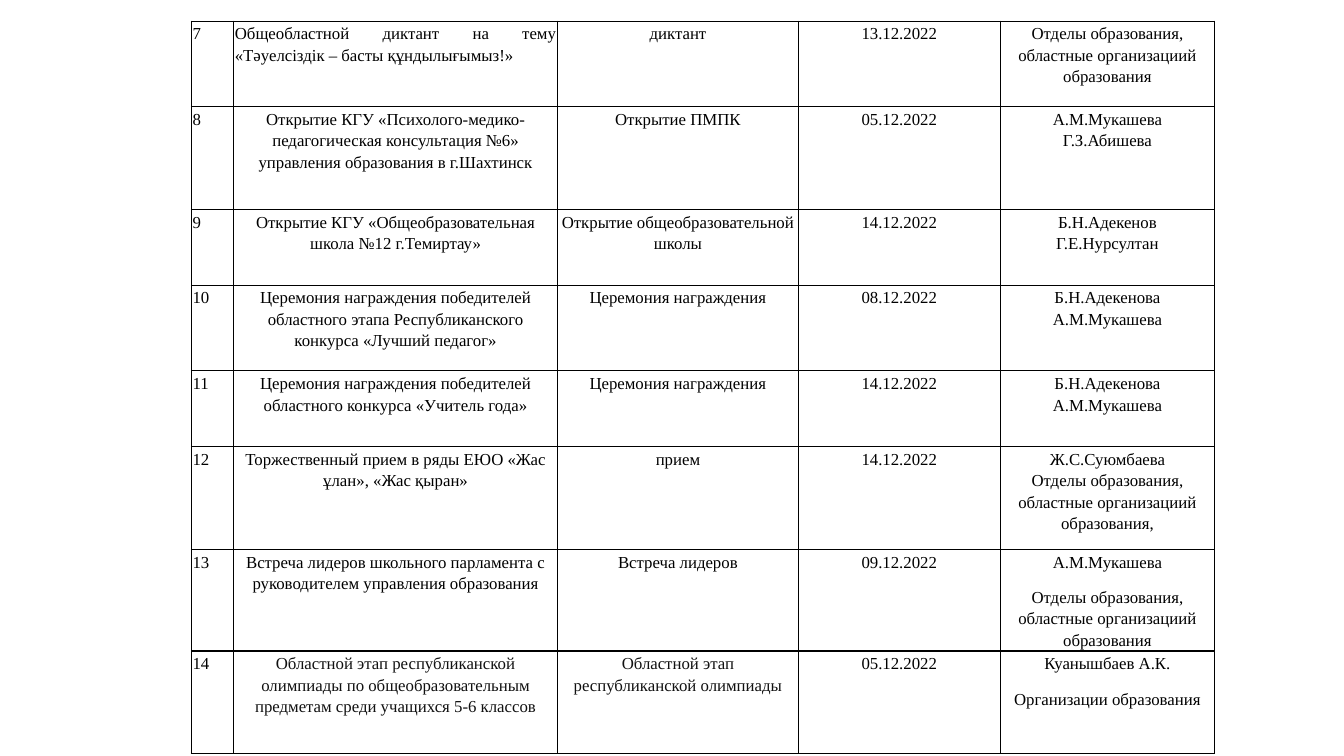
from lxml import etree
from pptx import Presentation
from pptx.dml.color import RGBColor
from pptx.enum.text import PP_ALIGN
from pptx.oxml.ns import qn
from pptx.util import Inches, Pt

LEFT, CENTER, JUSTIFY = PP_ALIGN.LEFT, PP_ALIGN.CENTER, PP_ALIGN.JUSTIFY
BLACK = RGBColor(0x00, 0x00, 0x00)
DARK = RGBColor(0x11, 0x11, 0x11)
FONT = "Times New Roman"
MARGIN = Inches(0.01)
COL_WIDTHS = [0.42, 3.21, 2.39, 2, 2.13]
ROW_HEIGHTS = [0.85, 1.02, 0.75, 0.85, 0.75, 1.02, 0.75, 1.02]
FIRST_NUMBER = 7
EVENTS = [
    ("Общеобластной диктант на тему «Тәуелсіздік – басты құндылығымыз!»",
     "диктант", "13.12.2022",
     "Отделы образования, областные организациий образования"),
    ("Открытие КГУ «Психолого-медико-педагогическая консультация №6» "
     "управления образования в г.Шахтинск",
     "Открытие ПМПК", "05.12.2022", "А.М.Мукашева\nГ.З.Абишева"),
    ("Открытие КГУ «Общеобразовательная школа №12 г.Темиртау»",
     "Открытие общеобразовательной школы", "14.12.2022",
     "Б.Н.Адекенов\nГ.Е.Нурсултан"),
    ("Церемония награждения победителей областного этапа "
     "Республиканского конкурса «Лучший педагог»",
     "Церемония награждения", "08.12.2022", "Б.Н.Адекенова\nА.М.Мукашева"),
    ("Церемония награждения победителей областного конкурса «Учитель года»",
     "Церемония награждения", "14.12.2022", "Б.Н.Адекенова\nА.М.Мукашева"),
    ("Торжественный прием в ряды ЕЮО «Жас ұлан», «Жас қыран»",
     "прием", "14.12.2022",
     "Ж.С.Суюмбаева\nОтделы образования, областные организациий образования,"),
    ("Встреча лидеров школьного парламента с руководителем управления образования",
     "Встреча лидеров", "09.12.2022",
     "А.М.Мукашева\nОтделы образования, областные организациий образования"),
    ("Областной этап республиканской олимпиады по общеобразовательным "
     "предметам среди учащихся 5-6 классов",
     "Областной этап республиканской олимпиады", "05.12.2022",
     "Куанышбаев А.К.\nОрганизации образования"),
]
TIGHT_ROWS = {8, 9, 10, 11, 12}


def add_borders(cell):
    """Draw a thin black line on all four sides of a cell."""
    tc_pr = cell._tc.get_or_add_tcPr()
    for i, side in enumerate(("a:lnL", "a:lnR", "a:lnT", "a:lnB")):
        ln = etree.Element(qn(side), w=str(Pt(1)))
        fill = etree.SubElement(ln, qn("a:solidFill"))
        etree.SubElement(fill, qn("a:srgbClr"), val=str(BLACK))
        tc_pr.insert(i, ln)


def fill_cell(cell, text, align, space_after, color):
    """Write the text of a cell and format it."""
    cell.margin_left = cell.margin_right = MARGIN
    cell.margin_top = cell.margin_bottom = MARGIN
    cell.fill.background()
    add_borders(cell)
    cell.text_frame.text = text
    for p in cell.text_frame.paragraphs:
        p.alignment = align
        p.line_spacing = 1.15
        p.space_after = Pt(space_after)
        for r in p.runs:
            r.font.name = FONT
            r.font.size = Pt(12)
            r.font.color.rgb = color


def add_events_table(slide, left, top):
    """Place the numbered table of events with its corner at left, top."""
    table = slide.shapes.add_table(
        len(EVENTS), len(COL_WIDTHS), Inches(left), Inches(top),
        Inches(sum(COL_WIDTHS)), Inches(sum(ROW_HEIGHTS))).table
    table.first_row = table.horz_banding = False
    for column, width in zip(table.columns, COL_WIDTHS):
        column.width = Inches(width)
    for row, height in zip(table.rows, ROW_HEIGHTS):
        row.height = Inches(height)
    last_number = FIRST_NUMBER + len(EVENTS) - 1
    for number, event in enumerate(EVENTS, FIRST_NUMBER):
        for col, text in enumerate((str(number), *event)):
            align = LEFT if col == 0 else CENTER
            if number == FIRST_NUMBER and col == 1:
                align = JUSTIFY
            tight = col == 0 or (col == 4 and number in TIGHT_ROWS)
            color = DARK if number == last_number and col in (1, 2) else BLACK
            fill_cell(table.cell(number - FIRST_NUMBER, col), text, align,
                      0 if tight else 10, color)


def main():
    """Build the slide and save it."""
    prs = Presentation()
    prs.slide_width, prs.slide_height = Inches(13.33), Inches(7.5)
    slide = prs.slides.add_slide(prs.slide_layouts[6])
    add_events_table(slide, 1.9, 0.21)
    prs.save("out.pptx")


if __name__ == "__main__":
    main()
